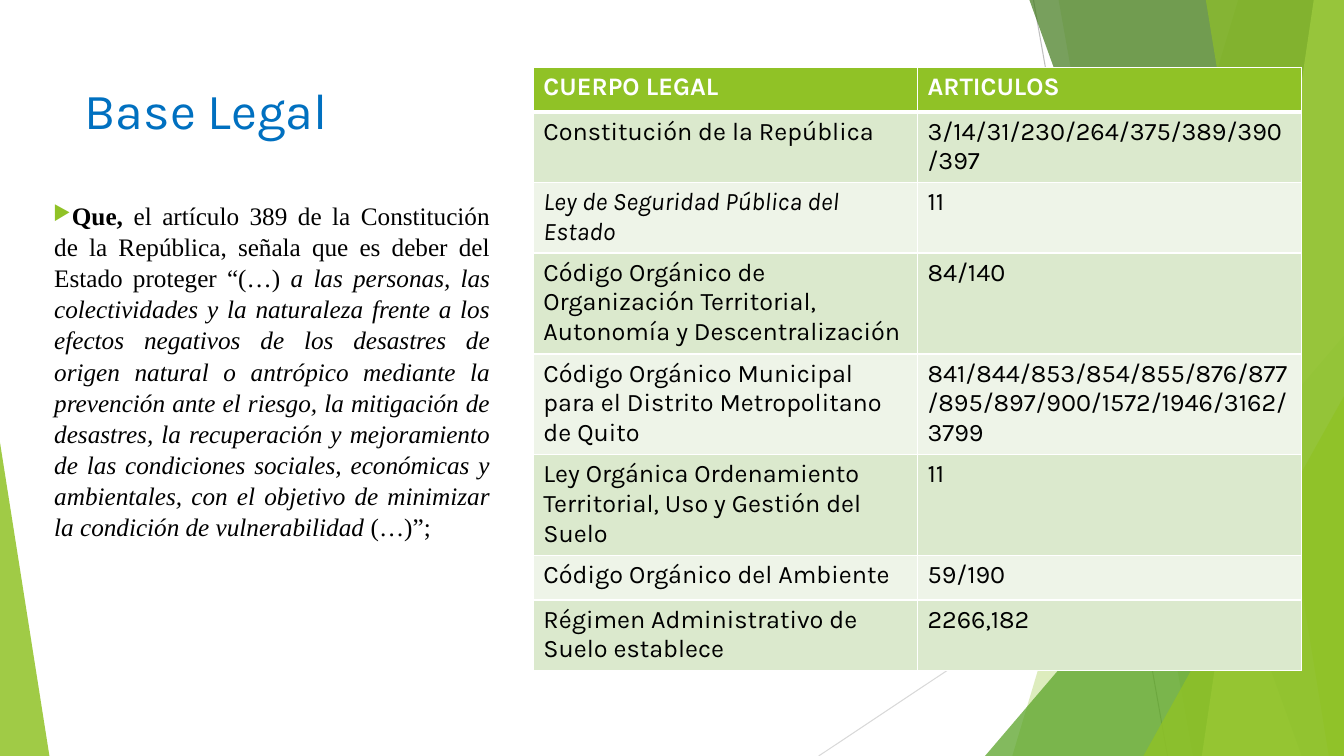
from lxml import etree
from pptx import Presentation
from pptx.dml.color import RGBColor
from pptx.enum.shapes import MSO_CONNECTOR, MSO_SHAPE
from pptx.enum.text import MSO_ANCHOR, PP_ALIGN
from pptx.oxml.ns import qn
from pptx.util import Inches, Pt

W, H = 13.33, 7.5
GREEN, BLACK, WHITE = "90C226", "000000", "FFFFFF"


def rgb(color):
    return RGBColor.from_string(color)


def child(parent, tag, **attrs):
    return etree.SubElement(parent, qn(tag), attrs)


class Deck:
    """Holds the slide and the heading font."""

    font = "Karla"

    def __init__(self, prs):
        self.slide = prs.slides.add_slide(prs.slide_layouts[6])
        self.shapes = self.slide.shapes

    def style(self, p, size, color, name=None):
        p.font.size, p.font.name = Pt(size), name or self.font
        p.font.color.rgb = rgb(color)

    def paint(self, s, color, opacity):
        """Fill with a colour at a percentage of opacity, without outline or shadow."""
        s.shadow.inherit = False
        s.line.fill.background()
        s.fill.solid()
        s.fill.fore_color.rgb = rgb(color)
        clr = s.fill._xPr.find(qn("a:solidFill"))[0]
        child(clr, "a:alpha", val=str(opacity * 1000))

    def line(self, x1, y1, x2, y2, color):
        c = self.shapes.add_connector(MSO_CONNECTOR.STRAIGHT, *map(Inches, (x1, y1, x2, y2)))
        c.line.color.rgb, c.line.width = rgb(color), Pt(0.75)
        child(c._element.spPr, "a:effectLst")

    def band(self, top_x, bottom_x, color, opacity):
        """Full-height band from a slanted left side to the right edge of the slide."""
        points = [(W, 0), (W, H), (bottom_x, H)]
        fb = self.shapes.build_freeform(Inches(top_x), 0)
        fb.add_line_segments([(Inches(x), Inches(y)) for x, y in points], close=True)
        self.paint(fb.convert_to_shape(), color, opacity)

    def triangle(self, x, y, w, apex, color, opacity):
        """Triangle standing on the bottom edge of the slide."""
        s = self.shapes.add_shape(MSO_SHAPE.ISOSCELES_TRIANGLE, *map(Inches, (x, y, w, H - y)))
        s.adjustments[0] = apex
        self.paint(s, color, opacity)

    def text(self, box, runs, size, color, name=None, anchor=MSO_ANCHOR.TOP):
        """Add one paragraph of (text, bold, italic) runs and return it."""
        tf = self.shapes.add_textbox(*map(Inches, box)).text_frame
        tf.word_wrap, tf.vertical_anchor = True, anchor
        p = tf.paragraphs[0]
        self.style(p, size, color, name)
        for words, bold, italic in runs:
            r = p.add_run()
            r.text, r.font.bold, r.font.italic = words, bold, italic
        return p

    def bullet(self, p, char, color, percent):
        pPr = p._p.get_or_add_pPr()
        pPr.set("marL", str(Inches(0.01)))
        pPr.set("indent", str(-Inches(0.01)))
        bullet = [etree.Element(qn(t)) for t in ("a:buClr", "a:buSzPct", "a:buChar")]
        child(bullet[0], "a:srgbClr", val=color)
        bullet[1].set("val", str(percent * 1000))
        bullet[2].set("char", char)
        defaults = pPr.find(qn("a:defRPr"))
        for element in bullet:
            defaults.addprevious(element)

    def cell(self, cell, words, fill, color, bold, italic, bottom):
        cell.text = words
        p = cell.text_frame.paragraphs[0]
        self.style(p, 18, color)
        p.font.bold, p.font.italic = bold, italic
        tcPr = cell._tc.get_or_add_tcPr()
        for side, width in (("L", 1), ("R", 1), ("T", 1), ("B", bottom)):
            ln = child(tcPr, f"a:ln{side}", w=str(Pt(width)))
            child(child(ln, "a:solidFill"), "a:srgbClr", val=WHITE)
        cell.fill.solid()
        cell.fill.fore_color.rgb = rgb(fill)

    def table(self, x, y, w, row_height, rows, italic_rows):
        frame = self.shapes.add_table(len(rows), len(rows[0]), Inches(x), Inches(y),
                                      Inches(w), Inches(row_height * len(rows)))
        for i, row in enumerate(rows):
            head = i == 0
            fill = GREEN if head else ("EEF4E8", "DBE9CD")[i % 2]
            for j, words in enumerate(row):
                self.cell(frame.table.cell(i, j), words, fill, WHITE if head else BLACK,
                          head, j == 0 and i in italic_rows, 3 if head else 1)


LAWS = [
    ("CUERPO LEGAL", "ARTICULOS"),
    ("Constitución de la República", "3/14/31/230/264/375/389/390/397"),
    ("Ley de Seguridad Pública del Estado", "11"),
    ("Código Orgánico de Organización Territorial, Autonomía y Descentralización", "84/140"),
    ("Código Orgánico Municipal para el Distrito Metropolitano de Quito",
     "841/844/853/854/855/876/877/895/897/900/1572/1946/3162/3799"),
    ("Ley Orgánica Ordenamiento Territorial, Uso y Gestión del Suelo", "11"),
    ("Código Orgánico del Ambiente", "59/190"),
    ("Régimen Administrativo de Suelo establece", "2266,182"),
]
ARTICLE = [
    ("Que,", True, False),
    (" el artículo 389 de la Constitución de la República, señala que es deber del "
     "Estado proteger “(…) ", False, False),
    ("a las personas, las colectividades y la naturaleza frente a los efectos negativos "
     "de los desastres de origen natural o antrópico mediante la prevención ante el riesgo, "
     "la mitigación de desastres, la recuperación y mejoramiento de las condiciones "
     "sociales, económicas y ambientales, con el objetivo de minimizar la condición de "
     "vulnerabilidad", False, True),
    (" (…)”;", False, False),
]


def main():
    prs = Presentation()
    prs.slide_width, prs.slide_height = Inches(W), Inches(H)
    deck = Deck(prs)

    deck.line(10.25, 0, 11.58, H, "BFBFBF")
    deck.line(W, 4.03, 8.12, H, "D9D9D9")
    deck.band(12.28, 10.04, GREEN, 30)
    deck.band(10.5, 11.83, GREEN, 20)
    deck.triangle(9.77, 3.33, 3.56, 1, "54A021", 72)
    deck.band(10.21, 12.91, "3F7819", 70)
    deck.band(13.03, 11.92, "C0E474", 70)
    deck.band(11.96, 13.18, GREEN, 65)
    deck.triangle(11.34, 3.93, 1.99, 1, GREEN, 80)
    deck.triangle(0, 4.39, 0.49, 0, GREEN, 85)

    deck.text((0.74, 0.67, 3.71, 0.82), [("Base Legal", False, False)], 36, "0070C0",
              anchor=MSO_ANCHOR.MIDDLE)
    p = deck.text((0.43, 1.93, 4.53, 3.83), ARTICLE, 18, BLACK, "Times New Roman")
    p.alignment, p.line_spacing = PP_ALIGN.JUSTIFY, 1.03
    p.space_before, p.space_after = Pt(10), Pt(0.5)
    deck.bullet(p, "▶", GREEN, 80)
    deck.table(5.29, 0.67, 7.62, 0.44, LAWS, italic_rows={2})

    prs.save("out.pptx")


if __name__ == "__main__":
    main()
